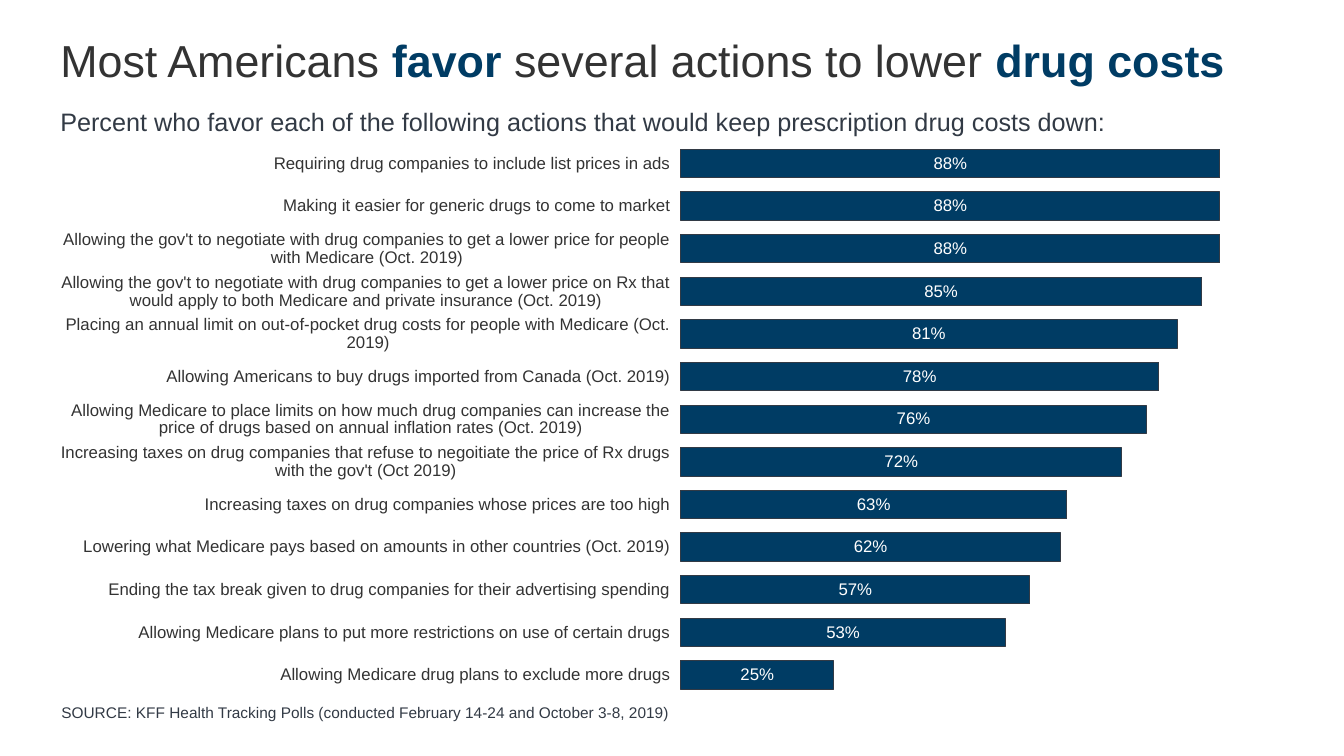
from lxml import etree
from pptx import Presentation
from pptx.chart.data import CategoryChartData
from pptx.dml.color import RGBColor
from pptx.enum.chart import XL_CHART_TYPE, XL_LABEL_POSITION, XL_TICK_MARK
from pptx.enum.text import MSO_ANCHOR
from pptx.oxml.ns import qn
from pptx.util import Inches, Pt

FONT = "Arial"
NAVY = RGBColor(0x00, 0x3C, 0x64)
SLATE = RGBColor(0x32, 0x3A, 0x45)
CHARCOAL = RGBColor(0x33, 0x33, 0x33)
WHITE = RGBColor(0xFF, 0xFF, 0xFF)

ACTIONS = [
    ("Requiring drug companies to include list prices in ads", 0.88),
    ("Making it easier for generic drugs to come to market", 0.88),
    ("Allowing the gov't to negotiate with drug companies to get a lower price "
     "for people with Medicare (Oct. 2019)", 0.88),
    ("Allowing the gov't to negotiate with drug companies to get a lower price "
     "on Rx that would apply to both Medicare and private insurance (Oct. 2019)", 0.85),
    ("Placing an annual limit on out-of-pocket drug costs for people with "
     "Medicare (Oct. 2019)", 0.81),
    ("Allowing Americans to buy drugs imported from Canada (Oct. 2019)", 0.78),
    ("Allowing Medicare to place limits on how much drug companies can increase "
     "the price of drugs based on annual inflation rates (Oct. 2019)", 0.76),
    ("Increasing taxes on drug companies that refuse to negoitiate the price of "
     "Rx drugs with the gov't (Oct 2019)", 0.72),
    ("Increasing taxes on drug companies whose prices are too high", 0.63),
    ("Lowering what Medicare pays based on amounts in other countries (Oct. 2019)", 0.62),
    ("Ending the tax break given to drug companies for their advertising spending", 0.57),
    ("Allowing Medicare plans to put more restrictions on use of certain drugs", 0.53),
    ("Allowing Medicare drug plans to exclude more drugs", 0.25),
]


def set_font(font, size, color, bold=False):
    font.name = FONT
    font.size = Pt(size)
    font.bold = bold
    font.color.rgb = color


def add_text(page, left, top, width, height, spans, size, anchor=MSO_ANCHOR.TOP):
    """Add one line of text made of (wording, color, bold) spans."""
    box = page.shapes.add_textbox(Inches(left), Inches(top), Inches(width), Inches(height))
    box.text_frame.word_wrap = True
    box.text_frame.vertical_anchor = anchor
    for wording, color, bold in spans:
        span = box.text_frame.paragraphs[0].add_run()
        span.text = wording
        set_font(span.font, size, color, bold)


def set_plot_layout(chart, **fractions):
    """Place the inner plot area by fractions of the chart frame."""
    plot_area = chart._chartSpace.chart.plotArea
    for old_layout in plot_area.findall(qn("c:layout")):
        plot_area.remove(old_layout)
    layout = etree.Element(qn("c:layout"))
    manual = etree.SubElement(layout, qn("c:manualLayout"))
    settings = {"layoutTarget": "inner", "xMode": "edge", "yMode": "edge", **fractions}
    for name, value in settings.items():
        etree.SubElement(manual, qn(f"c:{name}")).set("val", str(value))
    plot_area.insert(0, layout)


def add_favor_chart(page):
    data = CategoryChartData(number_format="0%")
    data.categories = [action for action, share in ACTIONS]
    data.add_series("Series 1", [share for action, share in ACTIONS])
    chart = page.shapes.add_chart(
        XL_CHART_TYPE.BAR_STACKED, Inches(0.5), Inches(1.41),
        Inches(12.33), Inches(5.5), data).chart
    chart.has_legend = False
    chart.has_title = False
    set_font(chart.font, 12, CHARCOAL)
    set_plot_layout(chart, x=0.507, y=0, w=0.493, h=1)

    # Axes
    actions_axis = chart.category_axis
    actions_axis.reverse_order = True
    actions_axis.major_tick_mark = XL_TICK_MARK.OUTSIDE
    actions_axis.format.line.fill.background()
    share_axis = chart.value_axis
    share_axis.minimum_scale = 0
    share_axis.maximum_scale = 1
    share_axis.major_unit = 0.1
    share_axis.has_major_gridlines = False
    share_axis.visible = False

    # Bars and their labels
    plot = chart.plots[0]
    plot.gap_width = 50
    plot.overlap = 100
    plot.vary_by_categories = False
    bars = plot.series[0]
    bars.format.fill.solid()
    bars.format.fill.fore_color.rgb = NAVY
    bars.format.line.color.rgb = SLATE
    bars.format.line.width = Pt(0.75)
    labels = bars.data_labels
    labels.show_value = True
    labels.position = XL_LABEL_POSITION.CENTER
    labels.number_format = "0%"
    labels.number_format_is_linked = False
    set_font(labels.font, 12, WHITE)


def main():
    deck = Presentation()
    deck.slide_width = Inches(13.33)
    deck.slide_height = Inches(7.5)
    page = deck.slides.add_slide(deck.slide_layouts[6])

    # Headline
    add_text(page, 0.5, 0.28, 12, 1, [
        ("Most Americans ", CHARCOAL, False),
        ("favor", NAVY, True),
        (" several actions to lower ", CHARCOAL, False),
        ("drug costs", NAVY, True),
    ], 32)

    # Source line
    add_text(page, 0.51, 6.61, 8.98, 0.6, [
        ("SOURCE: KFF Health Tracking Polls (conducted February 14-24 and "
         "October 3-8, 2019)", SLATE, False),
    ], 11, MSO_ANCHOR.BOTTOM)

    # Question and chart
    add_text(page, 0.5, 1.01, 10.83, 0.4, [
        ("Percent who favor each of the following actions that would keep "
         "prescription drug costs down:", SLATE, False),
    ], 18)
    add_favor_chart(page)

    deck.save("out.pptx")


if __name__ == "__main__":
    main()
